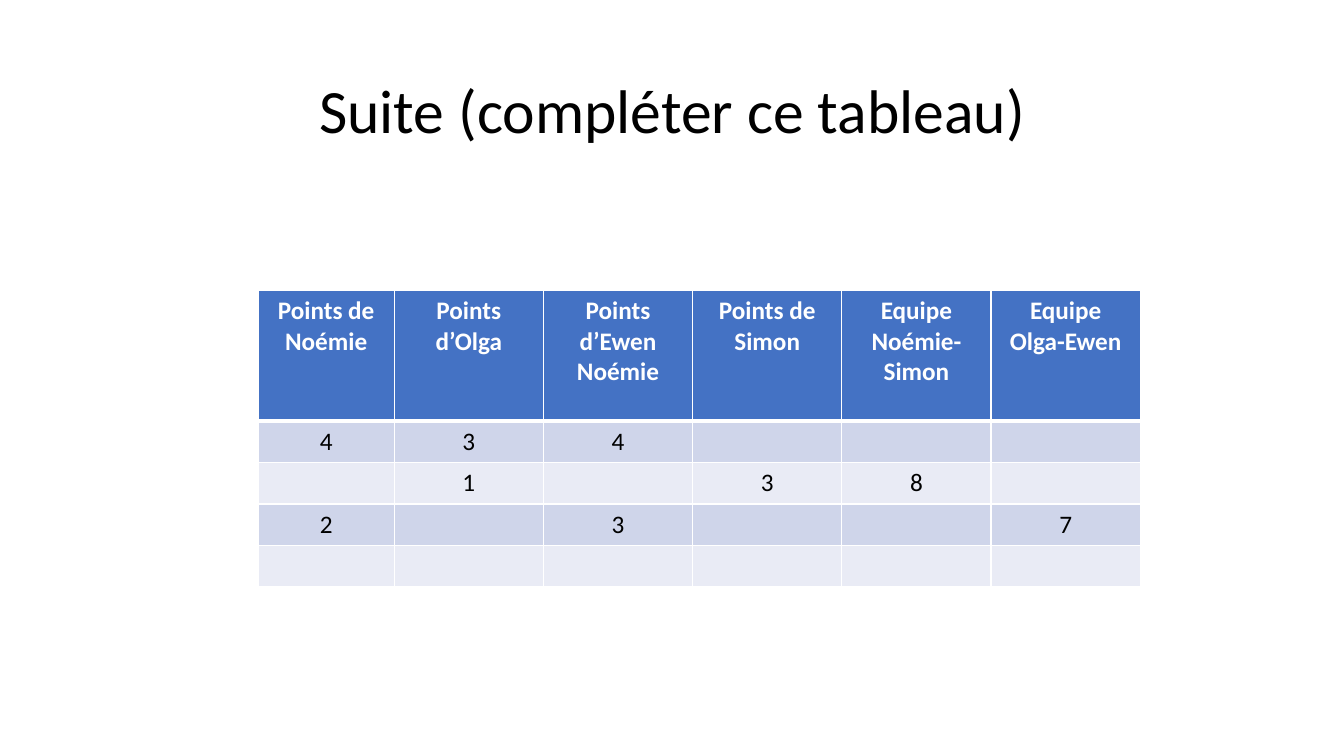
from dataclasses import dataclass

import pptx
import pptx.dml.color
import pptx.enum.text
import pptx.oxml
import pptx.oxml.ns
import pptx.util

Inches = pptx.util.Inches


@dataclass(frozen=True)
class Theme:
    font: str = "Calibri"
    title_size: int = 44
    cell_size: int = 18
    dark: str = "000000"
    light: str = "FFFFFF"
    header: str = "4472C4"
    bands: tuple = ("CFD5EA", "E9EBF5")
    thin: int = 1
    thick: int = 3


THEME = Theme()

HEADINGS = [
    "Points de Noémie",
    "Points d’Olga",
    "Points d’Ewen Noémie",
    "Points de Simon",
    "Equipe Noémie-Simon",
    "Equipe Olga-Ewen",
]
SCORES = [
    ["4", "3", "4", "", "", ""],
    ["", "1", "", "3", "8", ""],
    ["2", "", "3", "", "", "7"],
    ["", "", "", "", "", ""],
]
COLUMN_WIDTHS = [1.35] + [1.48] * 5
ROW_HEIGHTS = [1.3] + [0.41] * 4


def rgb(color):
    return pptx.dml.color.RGBColor.from_string(color)


def write(para, text, size, color, bold=False):
    para.alignment = pptx.enum.text.PP_ALIGN.CENTER
    span = para.add_run()
    span.text = text
    span.font.name = THEME.font
    span.font.size = pptx.util.Pt(size)
    span.font.bold = bold
    span.font.color.rgb = rgb(color)


def add_title(page, text):
    box = page.shapes.add_textbox(Inches(0.92), Inches(0.4), Inches(11.5), Inches(1.45))
    frame = box.text_frame
    frame.word_wrap = True
    frame.vertical_anchor = pptx.enum.text.MSO_ANCHOR.MIDDLE
    para = frame.paragraphs[0]
    para.line_spacing = 0.9
    write(para, text, THEME.title_size, THEME.dark)


def set_borders(cell, top, bottom):
    properties = cell._tc.get_or_add_tcPr()
    widths = {"lnL": THEME.thin, "lnR": THEME.thin, "lnT": top, "lnB": bottom}
    for position, (side, width) in enumerate(widths.items()):
        line = pptx.oxml.parse_xml(
            f'<a:{side} {pptx.oxml.ns.nsdecls("a")} w="{pptx.util.Pt(width)}">'
            f'<a:solidFill><a:srgbClr val="{THEME.light}"/></a:solidFill></a:{side}>'
        )
        properties.insert(position, line)


def fill_cell(cell, text, row):
    is_header = row == 0
    fill = THEME.header if is_header else THEME.bands[(row - 1) % 2]
    cell.fill.solid()
    cell.fill.fore_color.rgb = rgb(fill)
    set_borders(
        cell,
        top=THEME.thick if row == 1 else THEME.thin,
        bottom=THEME.thick if is_header else THEME.thin,
    )
    if text:
        color = THEME.light if is_header else THEME.dark
        write(cell.text_frame.paragraphs[0], text, THEME.cell_size, color, is_header)


def add_score_table(page, rows):
    table = page.shapes.add_table(
        len(rows), len(COLUMN_WIDTHS), Inches(2.56), Inches(2.88),
        Inches(sum(COLUMN_WIDTHS)), Inches(sum(ROW_HEIGHTS)),
    ).table
    for column, width in zip(table.columns, COLUMN_WIDTHS):
        column.width = Inches(width)
    for row, height in zip(table.rows, ROW_HEIGHTS):
        row.height = Inches(height)
    for row, texts in enumerate(rows):
        for column, text in enumerate(texts):
            fill_cell(table.cell(row, column), text, row)


def main():
    deck = pptx.Presentation()
    deck.slide_width = Inches(13.33)
    deck.slide_height = Inches(7.5)
    page = deck.slides.add_slide(deck.slide_layouts[6])
    add_title(page, "Suite (compléter ce tableau)")
    add_score_table(page, [HEADINGS] + SCORES)
    deck.save("out.pptx")


if __name__ == "__main__":
    main()
